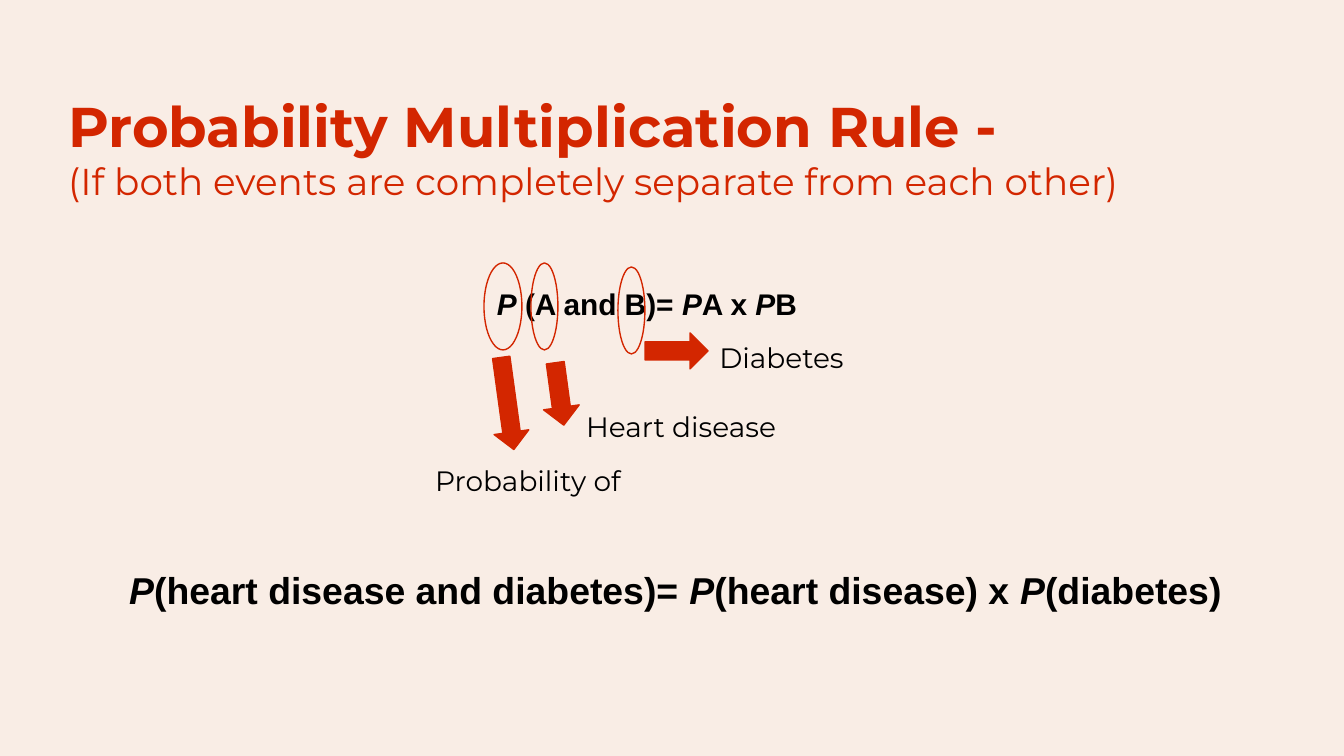
from pptx import Presentation
from pptx.dml.color import RGBColor
from pptx.enum.shapes import MSO_SHAPE
from pptx.enum.text import PP_ALIGN
from pptx.util import Emu, Pt

EMU_PER_PX = 914400 / 134.4
CREAM = RGBColor(0xF9, 0xED, 0xE5)
RED = RGBColor(0xD3, 0x26, 0x00)
BLACK = RGBColor(0x00, 0x00, 0x00)

# Label, label box, ellipse box, arrow box, arrow rotation
CALLOUTS = [
    ("Probability of", (422, 450, 235, 67), (484, 263, 38, 87), (461, 386, 93, 35), 82.2),
    ("Heart disease", (573, 396, 250, 51), (531, 263, 27, 87), (528, 376, 63, 36), 82.2),
    ("Diabetes", (706, 327, 224, 51), (618, 267, 27, 87), (645, 333, 63, 36), 0),
]


def px(length):
    return Emu(round(length * EMU_PER_PX))


def add_text_box(slide, box, text=""):
    """Add a wrapping text box with equal insets and return its text frame."""
    text_frame = slide.shapes.add_textbox(*map(px, box)).text_frame
    text_frame.word_wrap = True
    text_frame.margin_left = text_frame.margin_right = Pt(7.2)
    text_frame.margin_top = text_frame.margin_bottom = Pt(7.2)
    text_frame.text = text
    return text_frame


def format_runs(paragraph, size, color, bold=False, font_name="Montserrat"):
    for run in paragraph.runs:
        run.font.name = font_name
        run.font.size = Pt(size)
        run.font.bold = bold
        run.font.color.rgb = color


def write_formula(paragraph, parts, size):
    """Write the parts as bold runs, with each probability sign P in italics."""
    for part in parts:
        run = paragraph.add_run()
        run.text = part
        run.font.italic = part == "P"
    format_runs(paragraph, size, BLACK, bold=True, font_name="Arial")


def add_red_shape(slide, kind, box, rotation=0, filled=True):
    shape = slide.shapes.add_shape(kind, *map(px, box))
    shape.shadow.inherit = False
    shape.rotation = rotation
    if filled:
        shape.fill.solid()
        shape.fill.fore_color.rgb = RED
    else:
        shape.fill.background()
    shape.line.color.rgb = RED
    shape.line.width = Pt(0.75)


def add_heading_with_rule(slide):
    text_frame = add_text_box(slide, (55, 78, 1184, 250), "Probability Multiplication Rule -")
    format_runs(text_frame.paragraphs[0], 30, RED, bold=True)
    condition = text_frame.add_paragraph()
    condition.text = "(If both events are completely separate from each other)"
    format_runs(condition, 20, RED)
    rule = text_frame.add_paragraph()
    rule.alignment = PP_ALIGN.CENTER
    rule.space_before = Pt(44)
    write_formula(rule, ["P", " (A and B)= ", "P", "A x ", "P", "B"], 16)


def add_callout(slide, label, label_box, ellipse_box, arrow_box, rotation):
    add_red_shape(slide, MSO_SHAPE.OVAL, ellipse_box, filled=False)
    add_red_shape(slide, MSO_SHAPE.RIGHT_ARROW, arrow_box, rotation)
    text_frame = add_text_box(slide, label_box, label)
    format_runs(text_frame.paragraphs[0], 15, BLACK)


def add_example(slide):
    text_frame = add_text_box(slide, (116, 554, 1124, 87))
    parts = ["P", "(heart disease and diabetes)= ", "P", "(heart disease) x ", "P", "(diabetes)"]
    write_formula(text_frame.paragraphs[0], parts, 20)


def main():
    presentation = Presentation()
    presentation.slide_width = px(1344)
    presentation.slide_height = px(756)
    slide = presentation.slides.add_slide(presentation.slide_layouts[6])
    slide.background.fill.solid()
    slide.background.fill.fore_color.rgb = CREAM
    add_heading_with_rule(slide)
    for callout in CALLOUTS:
        add_callout(slide, *callout)
    add_example(slide)
    presentation.save("out.pptx")


if __name__ == "__main__":
    main()
